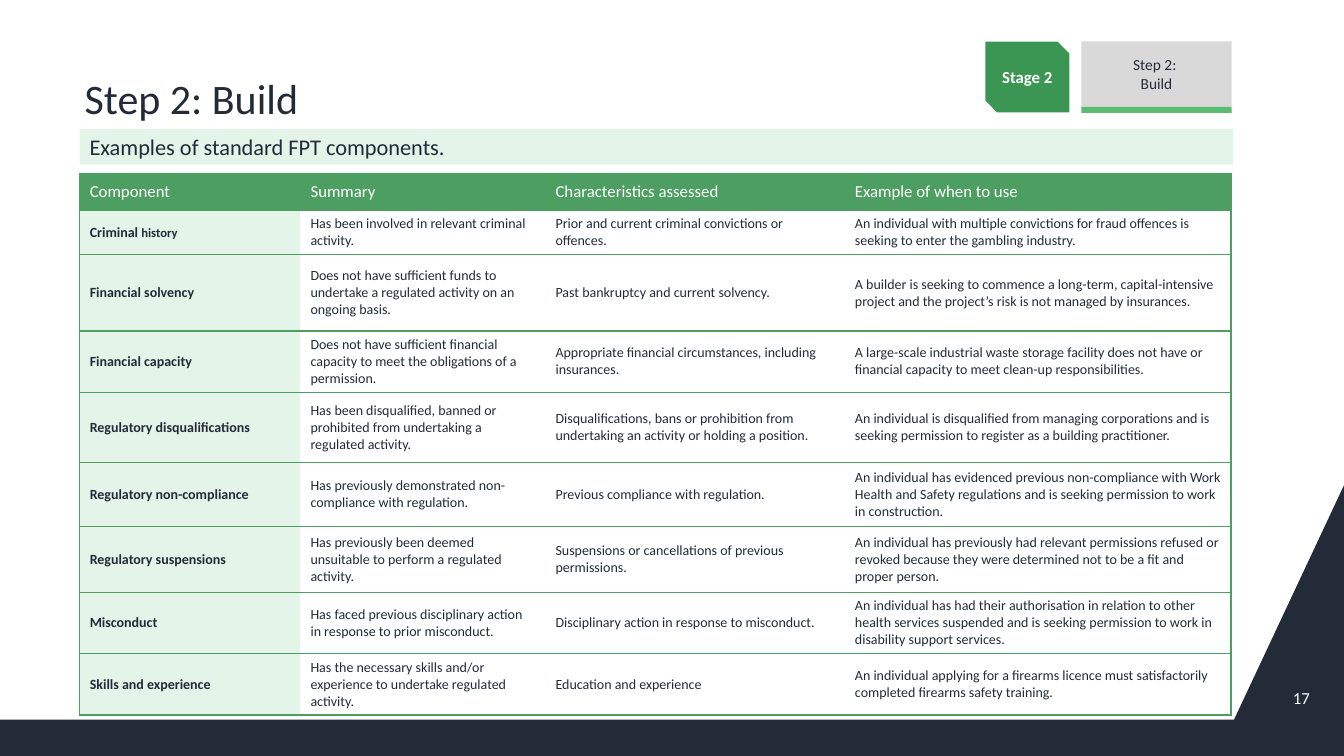
from dataclasses import dataclass

from lxml import etree
from pptx import Presentation
from pptx.dml.color import RGBColor
from pptx.enum.shapes import MSO_SHAPE
from pptx.enum.text import MSO_ANCHOR, MSO_AUTO_SIZE, PP_ALIGN
from pptx.oxml.ns import qn
from pptx.util import Inches, Pt

RECTANGLE = MSO_SHAPE.RECTANGLE
SNIPPED = MSO_SHAPE.SNIP_2_DIAG_RECTANGLE
MIDDLE, BOTTOM = MSO_ANCHOR.MIDDLE, MSO_ANCHOR.BOTTOM
LEFT, CENTER, RIGHT = PP_ALIGN.LEFT, PP_ALIGN.CENTER, PP_ALIGN.RIGHT
TITLE_ONLY = 5
SLIDE_WIDTH, SLIDE_HEIGHT = Inches(13.33), Inches(7.5)


@dataclass(frozen=True)
class Theme:
    font: str = "Calibri"
    ink: str = "232B39"
    white: str = "FFFFFF"
    green: str = "4C9E61"
    pale: str = "E5F4E9"
    band: str = "E4F4E8"
    stage: str = "3C9653"
    step: str = "D9D9D9"
    accent: str = "5BBD74"
    title: int = 30
    subtitle: int = 16
    label: int = 12
    tab: int = 11
    body: int = 10
    small: int = 9


THEME = Theme()


@dataclass(frozen=True)
class Area:
    """Percentages of the slide's width and height."""
    left: float
    top: float
    width: float
    height: float

    def emu(self) -> tuple[int, int, int, int]:
        return across(self.left), down(self.top), across(self.width), down(self.height)


@dataclass(frozen=True)
class Panel:
    area: Area
    fill: str
    text: str = ""
    size: int = THEME.label
    color: str = THEME.ink
    bold: bool = False
    align: PP_ALIGN = CENTER
    space: int = 0
    preset: MSO_SHAPE = RECTANGLE
    outline: str = ""


@dataclass(frozen=True)
class Component:
    name: str
    summary: str
    assessed: str
    example: str
    height: float
    name_tail: str = ""


PANELS = [
    Panel(Area(5.93, 17.07, 85.8, 4.67), THEME.band, "Examples of standard FPT components.",
          THEME.subtitle, align=LEFT, space=2),
    Panel(Area(73.22, 5.33, 6.45, 9.73), THEME.stage, "Stage 2", color=THEME.white,
          bold=True, preset=SNIPPED, outline=THEME.white),
    Panel(Area(80.46, 5.47, 11.18, 8.67), THEME.step, "Step 2: \nBuild", THEME.tab),
    Panel(Area(80.46, 14.13, 11.18, 0.8), THEME.accent),
]
TITLE_AREA = Area(6, 2, 85.75, 15.07)
NUMBER_AREA = Area(94.6, 89.6, 3.6, 5.33)
TABLE_AREA = Area(5.93, 22.93, 85.67, 71.6)
FOOTER_OUTLINE = [(91.82, 95.2), (0, 95.2), (0, 100), (100, 100), (100, 64.2)]
COLUMN_WIDTHS = [16.43, 18.23, 22.28, 28.73]
HEADER_HEIGHT = 4.9
HEADINGS = ["Component", "Summary", "Characteristics assessed", "Example of when to use"]
COMPONENTS = [
    Component("Criminal ", "Has been involved in relevant criminal activity.",
              "Prior and current criminal convictions or offences.",
              "An individual with multiple convictions for fraud offences is seeking to enter the gambling industry.",
              5.85, "history"),
    Component("Financial solvency",
              "Does not have sufficient funds to undertake a regulated activity on an ongoing basis.",
              "Past bankruptcy and current solvency.",
              "A builder is seeking to commence a long-term, capital-intensive project and the project’s risk is not managed by insurances.",
              10.1),
    Component("Financial capacity",
              "Does not have sufficient financial capacity to meet the obligations of a permission.",
              "Appropriate financial circumstances, including insurances.",
              "A large-scale industrial waste storage facility does not have or financial capacity to meet clean-up responsibilities.",
              8.1),
    Component("Regulatory disqualifications",
              "Has been disqualified, banned or prohibited from undertaking a regulated activity.",
              "Disqualifications, bans or prohibition from undertaking an activity or holding a position.",
              "An individual is disqualified from managing corporations and is seeking permission to register as a building practitioner.",
              9.35),
    Component("Regulatory non-compliance",
              "Has previously demonstrated non-compliance with regulation.",
              "Previous compliance with regulation.",
              "An individual has evidenced previous non-compliance with Work Health and Safety regulations and is seeking permission to work in construction.",
              8.4),
    Component("Regulatory suspensions",
              "Has previously been deemed unsuitable to perform a regulated activity.",
              "Suspensions or cancellations of previous permissions.",
              "An individual has previously had relevant permissions refused or revoked because they were determined not to be a fit and proper person.",
              8.75),
    Component("Misconduct",
              "Has faced previous disciplinary action in response to prior misconduct.",
              "Disciplinary action in response to misconduct.",
              "An individual has had their authorisation in relation to other health services suspended and is seeking permission to work in disability support services.",
              8.1),
    Component("Skills and experience",
              "Has the necessary skills and/or experience to undertake regulated activity.",
              "Education and experience",
              "An individual applying for a firearms licence must satisfactorily completed firearms safety training.",
              8.1),
]


def across(percent: float) -> int:
    return round(SLIDE_WIDTH * percent / 100)


def down(percent: float) -> int:
    return round(SLIDE_HEIGHT * percent / 100)


def rgb(color: str) -> RGBColor:
    return RGBColor.from_string(color)


def write(frame, text: str, *, size: int, color: str = THEME.ink, bold: bool = False,
          align: PP_ALIGN = LEFT, space: int = 0) -> None:
    para = frame.paragraphs[0]
    para.alignment = align
    para.space_before = para.space_after = Pt(space)
    for index, line in enumerate(text.split("\n")):
        if index:
            para.add_line_break()
        span = para.add_run()
        span.text = line
        span.font.name, span.font.size, span.font.bold = THEME.font, Pt(size), bold
        span.font.color.rgb = rgb(color)


def draw_panel(page, panel: Panel) -> None:
    box = page.shapes.add_shape(panel.preset, *panel.area.emu())
    box.shadow.inherit = False
    box.fill.solid()
    box.fill.fore_color.rgb = rgb(panel.fill)
    if panel.outline:
        box.line.color.rgb, box.line.width = rgb(panel.outline), Pt(2)
    else:
        box.line.fill.background()
    if panel.text:
        frame = box.text_frame
        frame.word_wrap, frame.vertical_anchor = True, MIDDLE
        write(frame, panel.text, size=panel.size, color=panel.color, bold=panel.bold,
              align=panel.align, space=panel.space)


def draw_footer(page) -> None:
    points = [(across(x), down(y)) for x, y in FOOTER_OUTLINE]
    builder = page.shapes.build_freeform(*points[0])
    builder.add_line_segments(points[1:], close=True)
    footer = builder.convert_to_shape()
    footer.shadow.inherit = False
    footer.fill.solid()
    footer.fill.fore_color.rgb = rgb(THEME.ink)
    footer.line.fill.background()


def style_cell(cell, fill: str, sides: str) -> None:
    properties = cell._tc.get_or_add_tcPr()
    for side in "LRTB":
        line = etree.SubElement(properties, qn(f"a:ln{side}"), w=str(Pt(1)))
        if side in sides:
            paint = etree.SubElement(line, qn("a:solidFill"))
            etree.SubElement(paint, qn("a:srgbClr"), val=THEME.green)
        else:
            etree.SubElement(line, qn("a:noFill"))
    cell.fill.solid()
    cell.fill.fore_color.rgb = rgb(fill)
    cell.vertical_anchor = MIDDLE


def draw_table(page) -> None:
    table = page.shapes.add_table(len(COMPONENTS) + 1, len(HEADINGS), *TABLE_AREA.emu()).table
    table.first_row = table.horz_banding = False
    for column, width in zip(table.columns, COLUMN_WIDTHS):
        column.width = across(width)
    for row, height in zip(table.rows, [HEADER_HEIGHT] + [item.height for item in COMPONENTS]):
        row.height = down(height)
    edges = ["LTB", "TB", "TB", "RTB"]
    for cell, heading, sides in zip(table.rows[0].cells, HEADINGS, edges):
        style_cell(cell, THEME.green, sides)
        cell.margin_top = cell.margin_bottom = 0
        write(cell.text_frame, heading, size=THEME.label, color=THEME.white, space=6)
    for index, item in enumerate(COMPONENTS, 1):
        texts = [item.name, item.summary, item.assessed, item.example]
        for column, (text, sides) in enumerate(zip(texts, edges)):
            cell = table.cell(index, column)
            style_cell(cell, THEME.white if column else THEME.pale, sides)
            write(cell.text_frame, text, size=THEME.body, bold=column == 0)
        if item.name_tail:
            write(table.cell(index, 0).text_frame, item.name_tail, size=THEME.small, bold=True)


def draw_title(page) -> None:
    title = page.shapes.title
    title.left, title.top, title.width, title.height = TITLE_AREA.emu()
    frame = title.text_frame
    frame.auto_size, frame.word_wrap, frame.vertical_anchor = MSO_AUTO_SIZE.NONE, True, BOTTOM
    frame.margin_left = frame.margin_right = Inches(0.04)
    write(frame, "Step 2: Build", size=THEME.title)
    frame.paragraphs[0].line_spacing = 0.9


def main() -> None:
    deck = Presentation()
    deck.slide_width, deck.slide_height = SLIDE_WIDTH, SLIDE_HEIGHT
    page = deck.slides.add_slide(deck.slide_layouts[TITLE_ONLY])
    draw_footer(page)
    draw_table(page)
    draw_title(page)
    for panel in PANELS:
        draw_panel(page, panel)
    number = page.shapes.add_textbox(*NUMBER_AREA.emu()).text_frame
    number.word_wrap, number.vertical_anchor = True, MIDDLE
    write(number, "17", size=THEME.label, color=THEME.white, align=RIGHT)
    deck.save("out.pptx")


if __name__ == "__main__":
    main()
